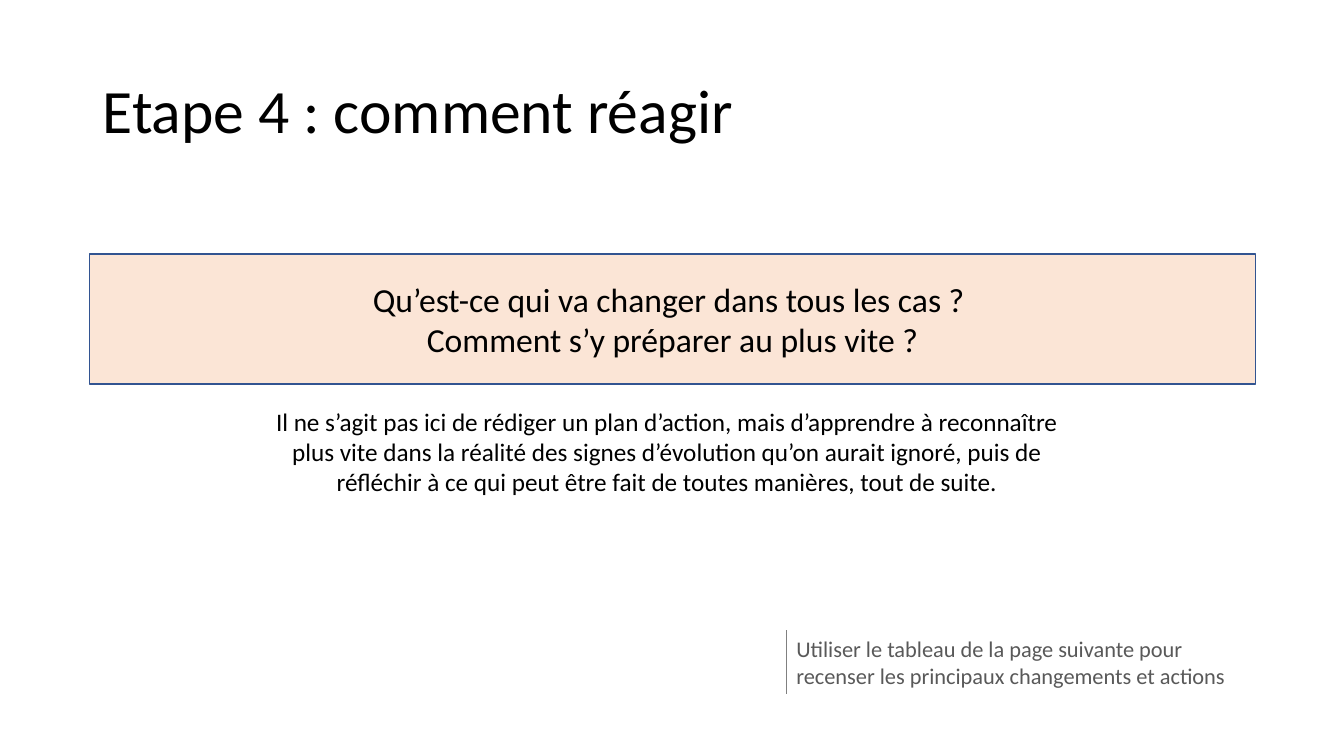
import pptx
import pptx.dml.color
import pptx.enum.shapes
import pptx.enum.text
import pptx.oxml.ns
import pptx.util
from lxml import etree
from pptx.util import Inches

ALIGN = pptx.enum.text.PP_ALIGN
ANCHOR = pptx.enum.text.MSO_ANCHOR


class SlideBuilder:
    """Holds the style and the current slide."""

    font_name = "Calibri"
    colours = {
        "text": "000000",
        "note": "595959",
        "rule": "808080",
        "question_fill": "FBE5D6",
        "question_line": "325491",
    }

    def __init__(self, page):
        self.page = page

    def colour(self, name):
        return pptx.dml.color.RGBColor.from_string(self.colours[name])

    def set_text(self, shape, text, size, colour="text", align=ALIGN.LEFT,
                 anchor=ANCHOR.TOP, line_spacing=None):
        frame = shape.text_frame
        frame.word_wrap = True
        frame.vertical_anchor = anchor
        para = frame.paragraphs[0]
        para.text = text
        para.alignment = align
        para.line_spacing = line_spacing
        para.font.name = self.font_name
        para.font.size = pptx.util.Pt(size)
        para.font.color.rgb = self.colour(colour)

    def text_box(self, left, top, width, height, text, size, **style):
        box = self.page.shapes.add_textbox(
            Inches(left), Inches(top), Inches(width), Inches(height))
        self.set_text(box, text, size, **style)

    def panel(self, left, top, width, height, text, size):
        """Add a filled, outlined rectangle with centred text."""
        box = self.page.shapes.add_shape(
            pptx.enum.shapes.MSO_SHAPE.RECTANGLE,
            Inches(left), Inches(top), Inches(width), Inches(height))
        box.shadow.inherit = False
        box.fill.solid()
        box.fill.fore_color.rgb = self.colour("question_fill")
        box.line.color.rgb = self.colour("question_line")
        box.line.width = pptx.util.Pt(1)
        self.set_text(box, text, size, align=ALIGN.CENTER,
                      anchor=ANCHOR.MIDDLE)

    def vertical_rule(self, left, top, height):
        rule = self.page.shapes.add_connector(
            pptx.enum.shapes.MSO_CONNECTOR.STRAIGHT,
            Inches(left), Inches(top), Inches(left), Inches(top + height))
        rule.line.color.rgb = self.colour("rule")
        rule.line.width = pptx.util.Pt(0.5)
        etree.SubElement(rule._element.spPr, pptx.oxml.ns.qn("a:effectLst"))


def main():
    deck = pptx.Presentation()
    deck.slide_width, deck.slide_height = Inches(13.33), Inches(7.5)
    builder = SlideBuilder(deck.slides.add_slide(deck.slide_layouts[6]))

    builder.text_box(0.92, 0.4, 11.5, 1.45, "Etape 4 : comment réagir", 44,
                     anchor=ANCHOR.MIDDLE, line_spacing=0.9)

    note_left, note_top, note_height = 7.8, 6.25, 0.64
    builder.text_box(note_left, note_top, 4.74, note_height,
                     "Utiliser le tableau de la page suivante pour recenser "
                     "les principaux changements et actions", 16,
                     colour="note")

    builder.panel(0.89, 2.52, 11.56, 1.29,
                  "Qu’est-ce qui va changer dans tous les cas ? \v"
                  "Comment s’y préparer au plus vite ?", 24)
    builder.text_box(2.52, 3.98, 8.19, 1.01,
                     "Il ne s’agit pas ici de rédiger un plan d’action, mais "
                     "d’apprendre à reconnaître plus vite dans la réalité des "
                     "signes d’évolution qu’on aurait ignoré, puis de "
                     "réfléchir à ce qui peut être fait de toutes manières, "
                     "tout de suite.", 18, align=ALIGN.CENTER)
    builder.vertical_rule(note_left, note_top, note_height)

    deck.save("out.pptx")


if __name__ == "__main__":
    main()
